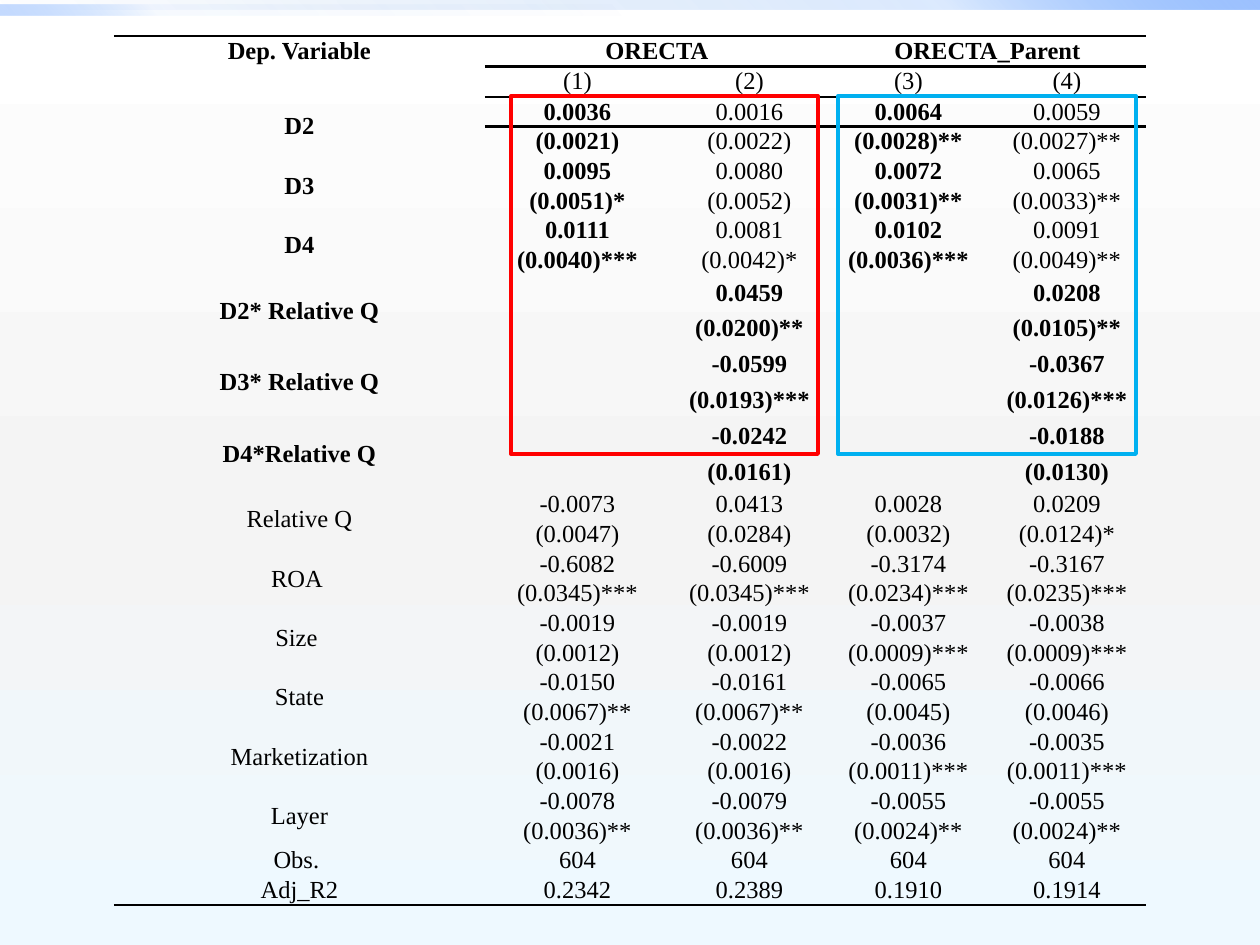
from dataclasses import dataclass

from lxml.etree import SubElement
from pptx import Presentation
from pptx.dml.color import RGBColor
from pptx.enum.shapes import MSO_SHAPE
from pptx.enum.text import MSO_ANCHOR, PP_ALIGN
from pptx.oxml.ns import qn
from pptx.util import Pt

EMU_PER_PX = 914400 // 126
PLAIN_TABLE_STYLE = "{2D5ABB26-0587-4C30-8999-92F81FD0307C}"


def px(length):
    return round(length * EMU_PER_PX)


@dataclass(frozen=True)
class Theme:
    font: str = "Times New Roman"
    text_size: int = 14
    text: str = "000000"
    rule_width: float = 1.5
    frame_width: float = 2.25
    own_frame: str = "FF0000"
    parent_frame: str = "00B0F0"
    # Gradient stops: position, colour, opacity (all in percent)
    backdrop: tuple = ((0, "FFFFFF", 100), (55, "F4F4F4", 100), (100, "EEF9FF", 100))
    top_band: tuple = ((0, "0058B7", 0), (75, "4F95FF", 20), (100, "9EC2FF", 100))
    left_band: tuple = ((0, "0058B7", 0), (75, "4F95FF", 5), (100, "9EC2FF", 60))


def write_text(cell, text, *, theme, bold=False, align=PP_ALIGN.CENTER):
    paragraph = cell.text_frame.paragraphs[0]
    paragraph.alignment = align
    if not text:
        # An empty cell keeps the row at the height of the table text
        SubElement(paragraph._p, qn("a:endParaRPr"), sz=str(theme.text_size * 100))
        return
    run = paragraph.add_run()
    run.text = text
    run.font.name = theme.font
    run.font.size = Pt(theme.text_size)
    run.font.bold = bold
    run.font.color.rgb = RGBColor.from_string(theme.text)


class SlideBuilder:
    def __init__(self, slide, theme):
        self.slide = slide
        self.theme = theme

    def gradient(self, fill, element, stops, angle):
        fill.gradient()
        fill.gradient_angle = (360 - angle) % 360
        stop_list = next(element.iter(qn("a:gsLst")))
        for default_stop in list(stop_list):
            stop_list.remove(default_stop)
        for position, color, opacity in stops:
            stop = SubElement(stop_list, qn("a:gs"), pos=str(position * 1000))
            tint = SubElement(stop, qn("a:srgbClr"), val=color)
            if opacity < 100:
                SubElement(tint, qn("a:alpha"), val=str(opacity * 1000))

    def backdrop(self, stops, angle):
        self.gradient(self.slide.background.fill, self.slide._element, stops, angle)

    def rectangle(self, left, top, width, height):
        box = self.slide.shapes.add_shape(
            MSO_SHAPE.RECTANGLE, px(left), px(top), px(width), px(height))
        box.shadow.inherit = False
        return box

    def band(self, left, top, width, height, stops, angle):
        band = self.rectangle(left, top, width, height)
        band.line.fill.background()
        self.gradient(band.fill, band._element, stops, angle)

    def frame(self, left, top, width, height, color):
        frame = self.rectangle(left, top, width, height)
        frame.fill.background()
        frame.line.color.rgb = RGBColor.from_string(color)
        frame.line.width = Pt(self.theme.frame_width)

    def table(self, left, top, column_widths, row_heights):
        holder = self.slide.shapes.add_table(
            len(row_heights), len(column_widths), px(left), px(top),
            px(sum(column_widths)), px(sum(row_heights)))
        table = holder.table
        table.first_row = table.horz_banding = False
        next(holder._element.iter(qn("a:tableStyleId"))).text = PLAIN_TABLE_STYLE
        for column, width in zip(table.columns, column_widths):
            column.width = px(width)
        for row, height in zip(table.rows, row_heights):
            row.height = px(height)
        return table

    def cell(self, cell, text, bold=False, sides=""):
        cell.vertical_anchor = MSO_ANCHOR.MIDDLE
        cell.margin_left = cell.margin_right = px(2)
        cell.margin_top = cell.margin_bottom = 0
        write_text(cell, text, theme=self.theme, bold=bold)
        # Borders come before the fill in the cell properties
        properties = cell._tc.get_or_add_tcPr()
        for side in sides:
            rule = SubElement(properties, qn(f"a:ln{side}"),
                              w=str(Pt(self.theme.rule_width)))
            solid = SubElement(rule, qn("a:solidFill"))
            SubElement(solid, qn("a:srgbClr"), val=self.theme.text)
        cell.fill.background()


# Regression results: label, bold columns, estimates, standard errors
ALL_COLUMNS = range(5)
VARIABLES = [
    ("D2", (0, 1, 3), "0.0036 0.0016 0.0064 0.0059",
     "(0.0021) (0.0022) (0.0028)** (0.0027)**"),
    ("D3", (0, 1, 3), "0.0095 0.0080 0.0072 0.0065",
     "(0.0051)* (0.0052) (0.0031)** (0.0033)**"),
    ("D4", (0, 1, 3), "0.0111 0.0081 0.0102 0.0091",
     "(0.0040)*** (0.0042)* (0.0036)*** (0.0049)**"),
    ("D2* Relative Q", ALL_COLUMNS, "0.0459 0.0208", "(0.0200)** (0.0105)**"),
    ("D3* Relative Q", ALL_COLUMNS, "-0.0599 -0.0367", "(0.0193)*** (0.0126)***"),
    ("D4*Relative Q", ALL_COLUMNS, "-0.0242 -0.0188", "(0.0161) (0.0130)"),
    ("Relative Q", (), "-0.0073 0.0413 0.0028 0.0209",
     "(0.0047) (0.0284) (0.0032) (0.0124)*"),
    ("ROA ", (), "-0.6082 -0.6009 -0.3174 -0.3167",
     "(0.0345)*** (0.0345)*** (0.0234)*** (0.0235)***"),
    ("Size ", (), "-0.0019 -0.0019 -0.0037 -0.0038",
     "(0.0012) (0.0012) (0.0009)*** (0.0009)***"),
    ("State", (), "-0.0150 -0.0161 -0.0065 -0.0066",
     "(0.0067)** (0.0067)** (0.0045) (0.0046)"),
    ("Marketization", (), "-0.0021 -0.0022 -0.0036 -0.0035",
     "(0.0016) (0.0016) (0.0011)*** (0.0011)***"),
    ("Layer", (), "-0.0078 -0.0079 -0.0055 -0.0055",
     "(0.0036)** (0.0036)** (0.0024)** (0.0024)**"),
]
SUMMARY = [("Obs. ", "604 604 604 604"), ("Adj_R2", "0.2342 0.2389 0.1910 0.1914")]


def model_values(line):
    """Spread values over the four models; interactions fill only (2) and (4)."""
    values = line.split()
    return values if len(values) == 4 else ["", values[0], "", values[1]]


def result_rows():
    """Yield the label, values and bold columns of every table row."""
    yield "Dep. Variable", ["ORECTA", "", "ORECTA_Parent", ""], ALL_COLUMNS
    yield "", ["(1)", "(2)", "(3)", "(4)"], ()
    for label, bold, estimates, errors in VARIABLES:
        yield label, model_values(estimates), bold
        yield "", model_values(errors), bold
    for label, values in SUMMARY:
        yield label, model_values(values), ()


def rule_sides(row, column, last_row):
    if row == 0:
        return "TB" if column else "T"
    if row == 1:
        return "TB" if column else ""
    if row == 2:
        return "T" if column else ""
    return "B" if row == last_row else ""


def fill_results(builder):
    # Row blocks: total height and number of rows
    blocks = [(61, 2), (178, 6), (215, 6), (416, 14)]
    heights = [total / count for total, count in blocks for _ in range(count)]
    table = builder.table(114, 36, [371, 185, 159, 159, 158], heights)
    last_row = len(heights) - 1
    for row, (label, values, bold) in enumerate(result_rows()):
        for column, text in enumerate([label, *values]):
            builder.cell(table.cell(row, column), text, column in bold,
                         rule_sides(row, column, last_row))
    for column in (1, 3):
        table.cell(0, column).merge(table.cell(0, column + 1))
    for row in range(2, 2 + 2 * len(VARIABLES), 2):
        table.cell(row, 0).merge(table.cell(row + 1, 0))


def main():
    deck = Presentation()
    deck.slide_width, deck.slide_height = px(1260), px(945)
    theme = Theme()
    builder = SlideBuilder(deck.slides.add_slide(deck.slide_layouts[6]), theme)

    # Backdrop and top bands
    builder.backdrop(theme.backdrop, 90)
    builder.band(0, 0, 1260, 10, theme.top_band, 315)
    builder.band(0, 5, 630, 10, theme.left_band, 135)

    # Regression table
    fill_results(builder)

    # Frames around the key estimates
    builder.frame(511, 96, 307, 358, theme.own_frame)
    builder.frame(838, 96, 298, 358, theme.parent_frame)

    deck.save("out.pptx")


if __name__ == "__main__":
    main()
